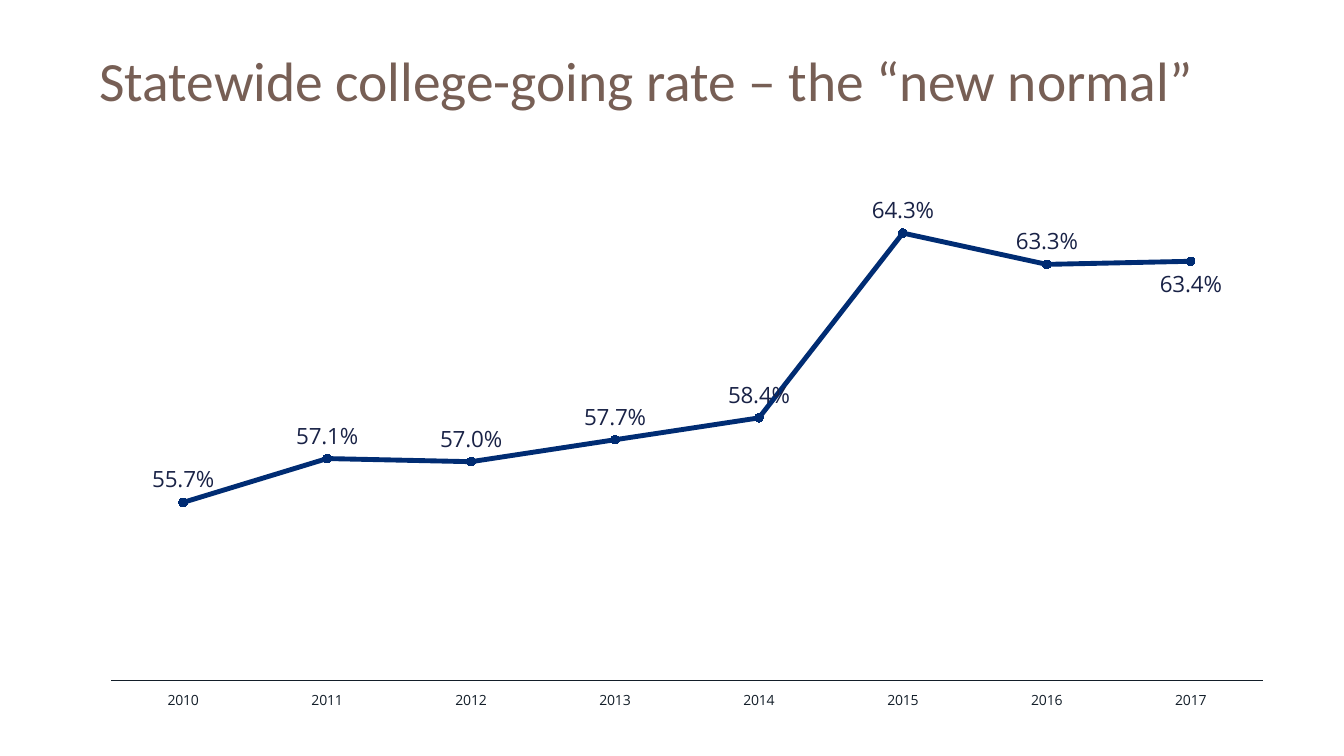
"""Build the slide on the statewide college-going rate."""
from typing import Any, NamedTuple

from lxml.etree import SubElement
from pptx import Presentation
from pptx.chart.data import CategoryChartData
from pptx.dml.color import RGBColor
from pptx.enum.chart import XL_CHART_TYPE as CHART, XL_LABEL_POSITION as LABEL
from pptx.enum.chart import XL_MARKER_STYLE as MARKER, XL_TICK_LABEL_POSITION as TICK_LABEL
from pptx.enum.chart import XL_TICK_MARK as TICK
from pptx.enum.text import MSO_ANCHOR
from pptx.oxml.ns import qn
from pptx.util import Pt

NAVY, INK, LABEL_INK, BROWN = "002C73", "131E29", "192246", "775F55"
LEFT, WIDTH = Pt(64), Pt(856)
PERCENT = "0.0%"


class Rate(NamedTuple):
    """College-going rate of one year."""
    year: str
    value: float
    position: Any = LABEL.ABOVE


RATES = [
    Rate("2010", 0.557), Rate("2011", 0.571), Rate("2012", 0.57), Rate("2013", 0.577),
    Rate("2014", 0.584), Rate("2015", 0.643), Rate("2016", 0.633),
    Rate("2017", 0.634, LABEL.BELOW),
]
PLOT = {"layoutTarget": "inner", "xMode": "edge", "yMode": "edge",
        "x": 0.018, "y": 0.159, "w": 0.961, "h": 0.796}


def rgb(value: str) -> RGBColor:
    """Turn a hex string into a colour."""
    return RGBColor.from_string(value)


def apply(target: Any, values: dict[str, Any]) -> None:
    """Set each named attribute on the target."""
    for name, value in values.items():
        setattr(target, name, value)


def set_font(font: Any, size: float, color: str, name: str = "Open Sans") -> None:
    """Set size, typeface and colour of a font."""
    apply(font, {"size": Pt(size), "name": name, "bold": False})
    font.color.rgb = rgb(color)


def set_line(line: Any, width: float, color: str) -> None:
    """Set width and colour of a line."""
    line.width = Pt(width)
    line.color.rgb = rgb(color)


def add_title(s: Any, text: str) -> None:
    """Add the slide title."""
    tf = s.shapes.add_textbox(LEFT, Pt(18), WIDTH, Pt(78)).text_frame
    apply(tf, {"word_wrap": True, "vertical_anchor": MSO_ANCHOR.MIDDLE})
    r = tf.paragraphs[0].add_run()
    r.text = text
    set_font(r.font, 39.6, BROWN, "Calibri")


def place_plot(chart: Any) -> None:
    """Fix the inner plot area within the chart."""
    area = chart.element.find(".//" + qn("c:plotArea"))
    for old in area.findall(qn("c:layout")):
        area.remove(old)
    layout = SubElement(area, qn("c:layout"))
    area.insert(0, layout)
    manual = SubElement(layout, qn("c:manualLayout"))
    for tag, value in PLOT.items():
        SubElement(manual, qn(f"c:{tag}")).set("val", str(value))


def style_series(series: Any) -> None:
    """Format the line, its markers and its labels."""
    series.smooth = False
    set_line(series.format.line, 3.5, NAVY)
    marker = series.marker
    apply(marker, {"style": MARKER.CIRCLE, "size": 6})
    marker.format.fill.solid()
    marker.format.fill.fore_color.rgb = rgb(NAVY)
    set_line(marker.format.line, 0.75, NAVY)
    labels = series.data_labels
    apply(labels, {"show_value": True, "position": LABEL.ABOVE,
                   "number_format": PERCENT, "number_format_is_linked": False})
    set_font(labels.font, 16, LABEL_INK)
    for i, rate in enumerate(RATES):
        if rate.position != LABEL.ABOVE:
            label = series.points[i].data_label
            set_font(label.font, 16, LABEL_INK)
            label.position = rate.position


def add_rate_chart(s: Any) -> None:
    """Add the line chart of yearly rates."""
    data = CategoryChartData(number_format=PERCENT)
    data.categories = [rate.year for rate in RATES]
    data.add_series("Series 1", [rate.value for rate in RATES])
    chart = s.shapes.add_chart(CHART.LINE_MARKERS, LEFT, Pt(57), WIDTH, Pt(450), data).chart
    apply(chart, {"has_legend": False, "has_title": False})
    set_font(chart.font, 10, INK)
    apply(chart.plots[0], {"vary_by_categories": False})
    apply(chart.value_axis, {"minimum_scale": 0.5, "maximum_scale": 0.66,
                             "has_major_gridlines": False, "visible": False})
    apply(chart.category_axis, {"major_tick_mark": TICK.NONE, "minor_tick_mark": TICK.NONE,
                                "tick_label_position": TICK_LABEL.LOW})
    set_line(chart.category_axis.format.line, 0.75, INK)
    place_plot(chart)
    style_series(chart.plots[0].series[0])


def main() -> None:
    """Build and save the presentation."""
    prs = Presentation()
    apply(prs, {"slide_width": Pt(960), "slide_height": Pt(540)})
    s = prs.slides.add_slide(prs.slide_layouts[6])
    add_title(s, "Statewide college-going rate – the “new normal”")
    add_rate_chart(s)
    prs.save("out.pptx")


if __name__ == "__main__":
    main()
